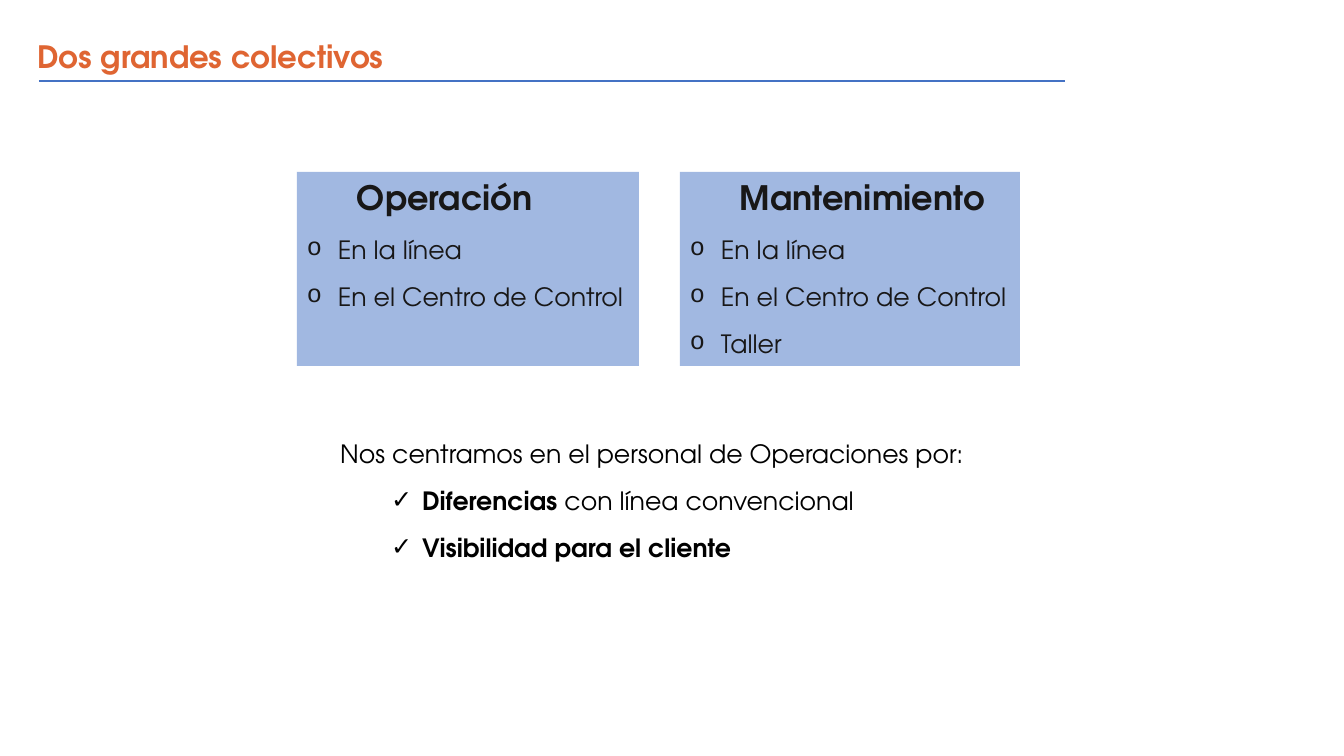
from lxml.etree import SubElement
from pptx import Presentation
from pptx.dml.color import RGBColor
from pptx.enum.shapes import MSO_CONNECTOR as Connector, MSO_SHAPE as Shape
from pptx.enum.text import MSO_ANCHOR as Anchor, MSO_AUTO_SIZE as AutoSize, PP_ALIGN as Align
from pptx.oxml.ns import qn
from pptx.util import Emu, Pt

FONT = "TeX Gyre Adventor"
ORANGE, BLUE, DARK, BLACK = "DF6532", "4472C4", "181717", "000000"

TITLE = "Dos grandes colectivos"
GROUPS = [
    ("Operación", 297, 342, ["En la línea", "En el Centro de Control"]),
    ("Mantenimiento", 680, 340, ["En la línea", "En el Centro de Control", "Taller"]),
]
FOCUS = "Nos centramos en el personal de Operaciones por:"
REASONS = [
    [("Diferencias ", True), ("con línea convencional", False)],
    [("Visibilidad para el cliente", True)],
]
TITLE_BOX = (27, 33, 882, 62)
FOCUS_BOX = (280, 433, 784, 136)
RULE = (39, 81, 1065, 81)
GROUP_TOP, GROUP_HEIGHT = 172, 194
HEADING_INDENT, HANGING, REASON_INDENT = 50, 31, 132


def px(*values):
    return [Emu(round(value * 914400 / 100.8)) for value in values]


def color(value):
    return RGBColor.from_string(value)


def place(shape, box):
    shape.left, shape.top, shape.width, shape.height = px(*box)
    frame = shape.text_frame
    frame.word_wrap = True
    frame.auto_size = AutoSize.NONE
    frame.vertical_anchor = Anchor.TOP
    return frame


def write(frame, text, size=18, ink=BLACK, bold=False, level=0, indent=0,
          bullet=None, bullet_font=None, after=12):
    first = frame.paragraphs[0]
    paragraph = frame.add_paragraph() if first.runs else first
    paragraph.level = level
    paragraph.alignment = Align.LEFT
    paragraph.space_before, paragraph.space_after = Pt(0), Pt(after)
    properties = paragraph._p.get_or_add_pPr()
    properties.set("marL", str(px(indent)[0]))
    properties.set("indent", str(px(-HANGING if bullet else 0)[0]))
    if bullet_font:
        SubElement(properties, qn("a:buFont"), typeface=bullet_font)
    if bullet:
        SubElement(properties, qn("a:buChar"), char=bullet)
    else:
        SubElement(properties, qn("a:buNone"))
    for words, weight in [(text, bold)] if isinstance(text, str) else text:
        run = paragraph.add_run()
        run.text = words
        run.font.name, run.font.size, run.font.bold = FONT, Pt(size), weight
        run.font.color.rgb = color(ink)


def add_group(slide, heading, left, width, items):
    shape = slide.shapes.add_shape(Shape.RECTANGLE, 0, 0, 0, 0)
    frame = place(shape, (left, GROUP_TOP, width, GROUP_HEIGHT))
    shape.shadow.inherit = False
    shape.fill.solid()
    shape.fill.fore_color.rgb = color(BLUE)
    fill_color = next(shape._element.spPr.iter(qn("a:srgbClr")))
    SubElement(fill_color, qn("a:alpha"), val="50000")
    shape.line.fill.background()
    write(frame, heading, size=24, ink=DARK, bold=True, level=1, indent=HEADING_INDENT)
    for item in items:
        write(frame, item, ink=DARK, indent=HANGING, bullet="o", bullet_font="Courier New")


def main():
    presentation = Presentation()
    presentation.slide_width, presentation.slide_height = px(1344, 756)
    slide = presentation.slides.add_slide(presentation.slide_layouts[1])

    title = place(slide.shapes.title, TITLE_BOX)
    write(title, TITLE, size=22, ink=ORANGE, bold=True, after=0)

    for group in GROUPS:
        add_group(slide, *group)

    focus = place(slide.placeholders[1], FOCUS_BOX)
    write(focus, FOCUS, level=1, indent=HEADING_INDENT)
    for reason in REASONS:
        write(focus, reason, level=2, indent=REASON_INDENT, bullet="✓")

    rule = slide.shapes.add_connector(Connector.STRAIGHT, *px(*RULE))
    rule.line.color.rgb = color(BLUE)
    rule.line.width = Pt(2)
    SubElement(rule._element.spPr, qn("a:effectLst"))

    presentation.save("out.pptx")


if __name__ == "__main__":
    main()
